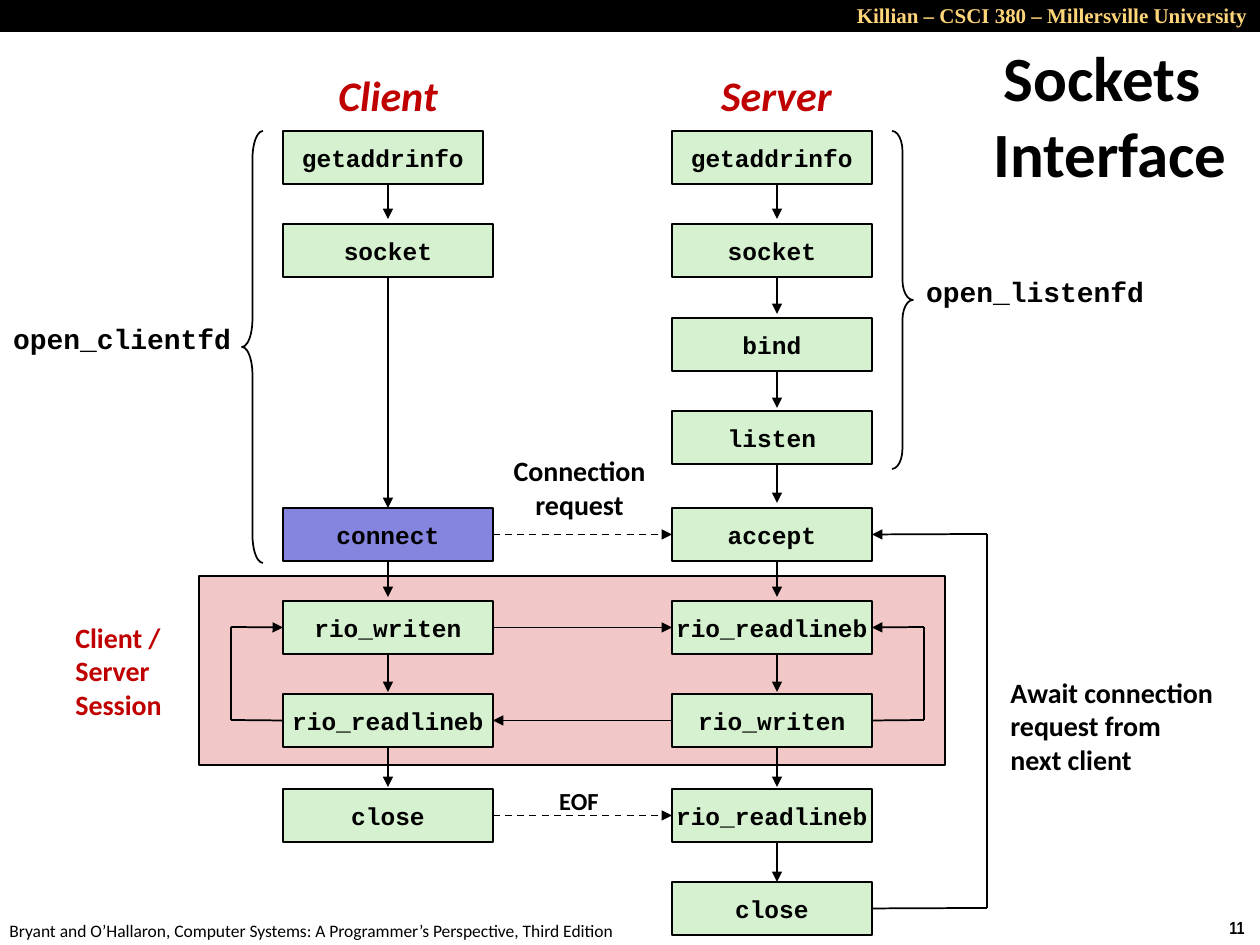
import lxml.etree
import pptx
import pptx.dml.color
import pptx.enum.dml
import pptx.enum.shapes
import pptx.enum.text
import pptx.oxml.ns
import pptx.util

PX = 7257
rgb = pptx.dml.color.RGBColor.from_string
qn = pptx.oxml.ns.qn
SHAPE = pptx.enum.shapes.MSO_SHAPE
ALIGN = {"l": pptx.enum.text.PP_ALIGN.LEFT, "c": pptx.enum.text.PP_ALIGN.CENTER,
         "r": pptx.enum.text.PP_ALIGN.RIGHT}
ANCHOR = {"t": pptx.enum.text.MSO_ANCHOR.TOP, "m": pptx.enum.text.MSO_ANCHOR.MIDDLE}


def write(tf, text, size=16, font="Calibri", color="000000", bold=True, italic=False,
          align="c", anchor="m", wrap=False):
    tf.word_wrap = wrap
    tf.vertical_anchor = ANCHOR[anchor]
    for i, words in enumerate(text.split("\n")):
        p = tf.add_paragraph() if i else tf.paragraphs[0]
        p.alignment = ALIGN[align]
        r = p.add_run()
        r.text = words
        r.font.size = pptx.util.Pt(size)
        r.font.name = font
        r.font.bold = bold
        r.font.italic = italic
        r.font.color.rgb = rgb(color)


def line(x1, y1, x2, y2, arrow=True, dash=False, begin=None, end=None):
    c = s.shapes.add_connector(pptx.enum.shapes.MSO_CONNECTOR.STRAIGHT,
                               x1 * PX, y1 * PX, x2 * PX, y2 * PX)
    c.line.color.rgb = rgb("000000")
    c.line.width = pptx.util.Pt(1)
    if dash:
        c.line.dash_style = pptx.enum.dml.MSO_LINE.DASH
    spPr = c._element.spPr
    if arrow:
        lxml.etree.SubElement(spPr.find(qn("a:ln")), qn("a:tailEnd"), type="triangle")
    lxml.etree.SubElement(spPr, qn("a:effectLst"))
    if begin:
        c.begin_connect(*begin)
    if end:
        c.end_connect(*end)


prs = pptx.Presentation()
prs.slide_width = pptx.util.Inches(10)
prs.slide_height = pptx.util.Inches(7.5)
s = prs.slides.add_slide(prs.slide_layouts[5])

title = s.shapes.title
title.left, title.top, title.width, title.height = 955 * PX, 32 * PX, 294 * PX, 165 * PX
write(title.text_frame, "Sockets Interface", size=36, wrap=True)
pPr = title.text_frame.paragraphs[0]._p.get_or_add_pPr()
pPr.set("marL", str(16 * PX))
pPr.set("indent", str(-16 * PX))

BOX_H = 53
TOPS = [131, 224, 318, 411, 508, 601, 694, 789, 882]
TIPS = [131, 219, 314, 408, 503, 597, 692, 787, 882]
GREEN = "D5F1CF"
client = {0: "getaddrinfo", 1: "socket", 4: "connect", 5: "rio_writen",
          6: "rio_readlineb", 7: "close"}
server = dict(enumerate(["getaddrinfo", "socket", "bind", "listen", "accept",
                         "rio_readlineb", "rio_writen", "rio_readlineb", "close"]))

rects = [("header", 0, 0, 1260, 31, "000000", None),
         ("session", 199, 576, 746, 189, "F1C7C7", None)]
for row, name in client.items():
    fill = "8585E0" if name == "connect" else GREEN
    rects.append((("client", row), 283, TOPS[row], 210 if row else 200, BOX_H, fill, name))
for row, name in server.items():
    rects.append((("server", row), 672, TOPS[row], 200, BOX_H, GREEN, name))

boxes = {}
for key, x, y, w, h, fill, name in rects:
    sp = s.shapes.add_shape(SHAPE.RECTANGLE, x * PX, y * PX, w * PX, h * PX)
    sp.shadow.inherit = False
    sp.fill.solid()
    sp.fill.fore_color.rgb = rgb(fill)
    sp.line.color.rgb = rgb("000000")
    sp.line.width = pptx.util.Pt(1)
    if name:
        write(sp.text_frame, name, size=14, font="Courier New")
    boxes[key] = sp

for x, calls in ((388, client), (777, server)):
    rows = list(calls)
    for row, after in zip(rows, rows[1:]):
        tip = TIPS[after] if after == row + 1 else TOPS[after]
        line(x, TOPS[row] + BOX_H, x, tip)

for row, dash in ((4, True), (5, False), (6, False), (7, True)):
    y = TOPS[row] + BOX_H // 2
    left, right = (boxes["client", row], 3), (boxes["server", row], 1)
    if row == 6:
        line(672, y, 493, y, begin=right, end=left)
    else:
        line(493, y, 672, y, dash=dash, begin=left, end=right)

for side, edge, x, start, stop, site in (("client", 283, 231, 6, 5, 1),
                                         ("server", 872, 924, 6, 5, 3),
                                         ("server", 872, 987, 8, 4, 3)):
    y1, y2 = TOPS[start] + BOX_H // 2, TOPS[stop] + BOX_H // 2
    line(edge, y1, x, y1, arrow=False, begin=(boxes[side, start], site))
    line(x, y1, x, y2, arrow=False)
    line(x, y2, edge, y2, end=(boxes[side, stop], site))

for kind, x, h, curve in ((SHAPE.LEFT_BRACE, 242, 432, 1.33),
                          (SHAPE.RIGHT_BRACE, 892, 338, 0.96)):
    sp = s.shapes.add_shape(kind, x * PX, TOPS[0] * PX, 21 * PX, h * PX)
    sp.shadow.inherit = False
    sp.adjustments[0] = curve
    sp.adjustments[1] = 0.5
    sp.fill.background()
    sp.line.color.rgb = rgb("000000")
    sp.line.width = pptx.util.Pt(1)

heading = dict(size=24, color="C00000", italic=True)
code = dict(font="Courier New")
for x, y, w, h, text, fmt in (
    (325, 63, 126, 63, "Client", heading),
    (708, 63, 137, 63, "Server", heading),
    (0, 315, 244, 47, "open_clientfd", code),
    (913, 268, 244, 47, "open_listenfd", code),
    (500, 447, 159, 81, "Connection\nrequest", {}),
    (546, 779, 66, 43, "EOF", dict(size=14)),
    (63, 614, 116, 113, "Client / Server\nSession",
     dict(color="C00000", align="l", wrap=True)),
    (998, 668, 231, 115, "Await connection\nrequest from\nnext client", dict(align="l")),
    (567, -4, 693, 38, "Killian – CSCI 380 – Millersville University",
     dict(size=12, font="Times New Roman", color="FFD579", align="r", anchor="t", wrap=True)),
    (-3, 914, 640, 34,
     "Bryant and O’Hallaron, Computer Systems: A Programmer’s Perspective, Third Edition",
     dict(size=10, bold=False, align="l", anchor="t")),
    (1217, 911, 43, 34, "11", dict(size=10, font="Arial Narrow", align="l", anchor="t")),
):
    tb = s.shapes.add_textbox(x * PX, y * PX, w * PX, h * PX)
    write(tb.text_frame, text, **fmt)

prs.save("out.pptx")
